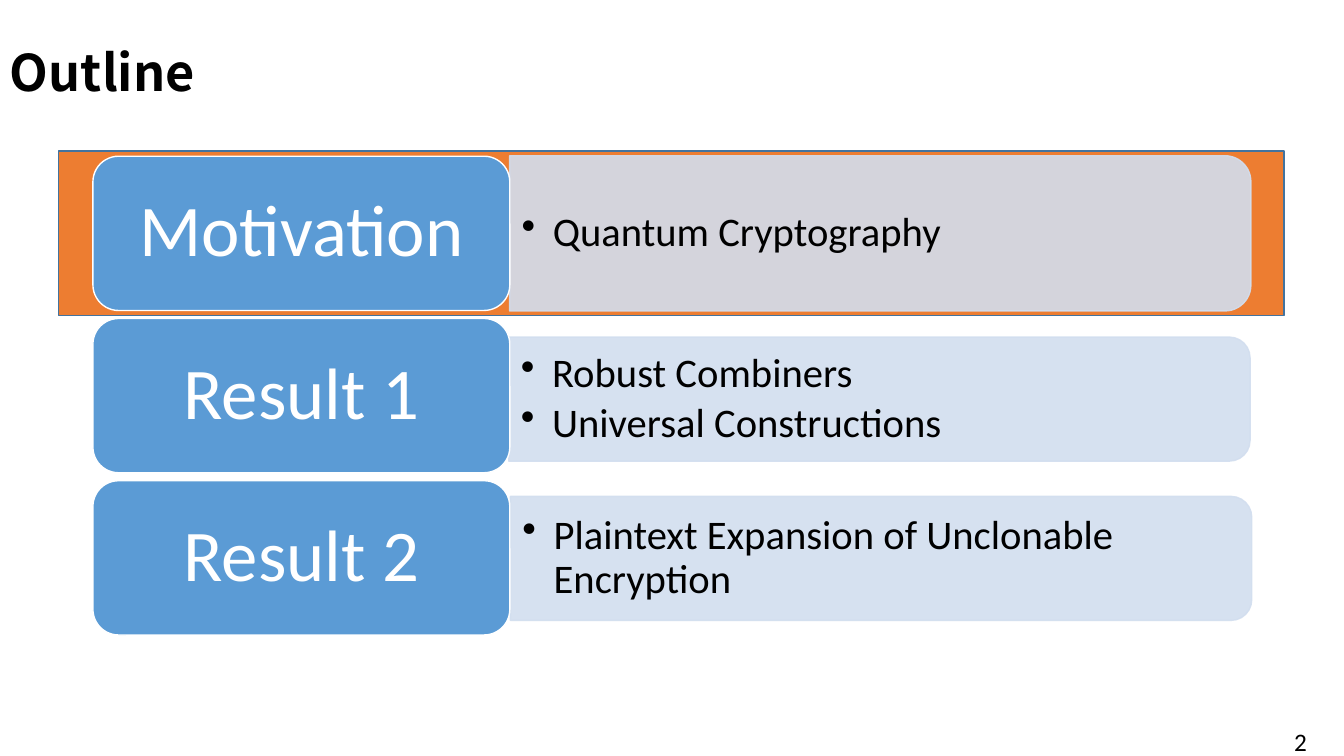
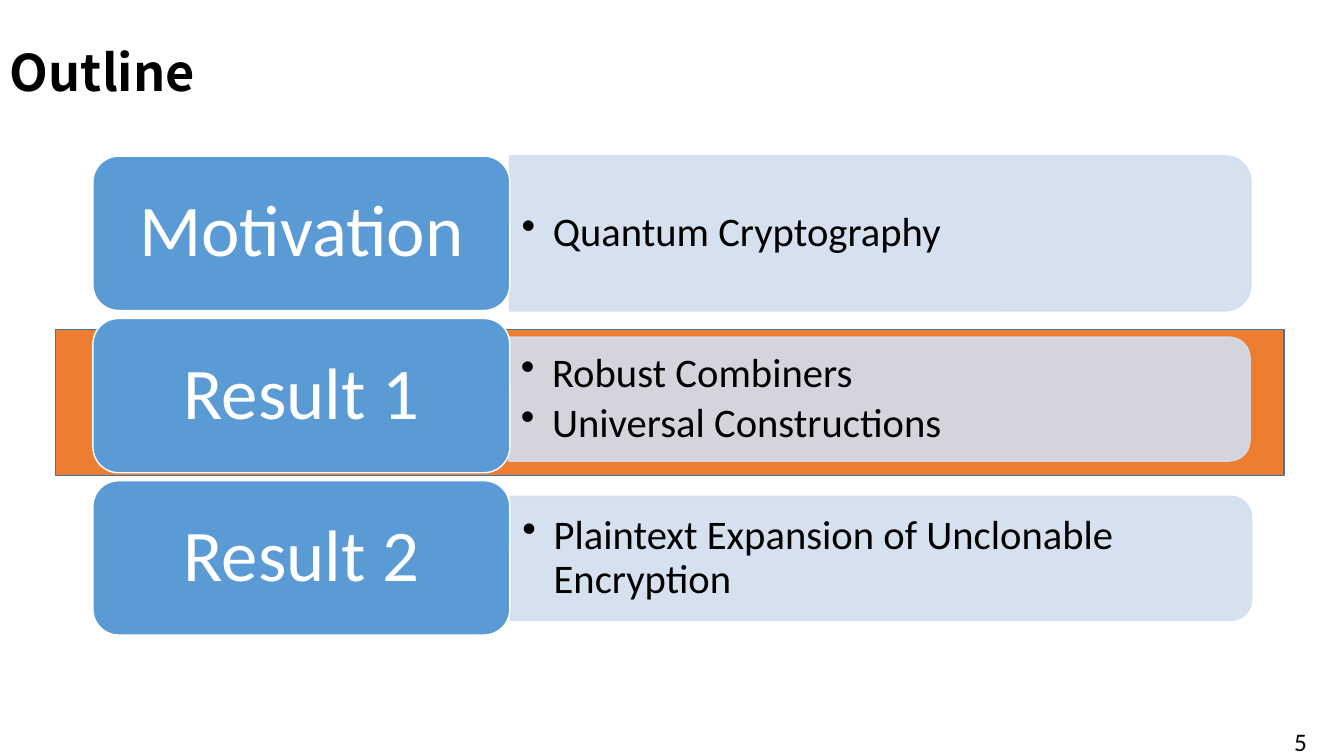
"""Build two outline slides, each with one topic marked by a band."""
from dataclasses import dataclass

from pptx import Presentation as Deck
from pptx.dml.color import RGBColor as Color
from pptx.enum.shapes import MSO_SHAPE as Kind
from pptx.enum.text import MSO_ANCHOR as Anchor, PP_ALIGN as Align
from pptx.oxml.ns import qn
from pptx.oxml.xmlchemy import OxmlElement as Node
from pptx.util import Pt


@dataclass(frozen=True)
class Theme:
    ink: str = "000000"
    white: str = "FFFFFF"
    blue: str = "5B9BD5"
    pale: str = "D2DEEF"
    band: str = "ED7D31"
    edge: str = "43739E"
    head: str = "Noto Sans CJK JP"
    body: str = "Calibri"
    title: float = 36
    label: float = 52
    item: float = 29
    page: float = 18
    lead: float = 0.9


class Pen:
    def __init__(self, deck, theme):
        self.deck, self.theme, self.slide = deck, theme, None

    def start(self, title, page):
        self.slide = self.deck.slides.add_slide(self.deck.slide_layouts[6])
        t = self.theme
        self.text((0, 1.5, 893.5, 104.5), [title], t.title, t.head, bold=True)
        self.text((917.3, 515.5, 27.4, 22.3), [page], t.page,
                  anchor=Anchor.TOP, lead=1)

    def shape(self, kind, box, fill, line):
        part = self.slide.shapes.add_shape(kind, *map(Pt, box))
        part.shadow.inherit = False
        part.fill.solid()
        part.fill.fore_color.rgb = Color.from_string(fill)
        part.line.color.rgb = Color.from_string(line)
        part.line.width = Pt(1)
        return part

    def fill(self, frame, lines, size, face, color, bold=False, lead=None):
        for i, line in enumerate(lines):
            para = frame.paragraphs[0] if i == 0 else frame.add_paragraph()
            para.text = line
            para.line_spacing = lead or self.theme.lead
            font = para.font
            font.size, font.name, font.bold = Pt(size), face, bold
            font.color.rgb = Color.from_string(color)

    def text(self, box, lines, size, face=None, bold=False,
             anchor=Anchor.MIDDLE, lead=None):
        t = self.theme
        frame = self.slide.shapes.add_textbox(*map(Pt, box)).text_frame
        frame.word_wrap = True
        frame.vertical_anchor = anchor
        self.fill(frame, lines, size, face or t.body, t.ink, bold, lead)
        return frame

    def band(self, box):
        self.shape(Kind.RECTANGLE, box, self.theme.band, self.theme.edge)

    def label(self, box, word):
        t = self.theme
        part = self.shape(Kind.ROUNDED_RECTANGLE, box, t.blue, t.white)
        frame = part.text_frame
        frame.word_wrap = True
        frame.vertical_anchor = Anchor.MIDDLE
        self.fill(frame, [word], t.label, t.body, t.white)
        frame.paragraphs[0].alignment = Align.CENTER

    def panel(self, left, mid, width, high):
        t = self.theme
        box = (left + (width - high) / 2, mid - width / 2, high, width)
        part = self.shape(Kind.ROUND_2_SAME_RECTANGLE, box, t.pale, t.pale)
        part.rotation = 90
        for tint in part.element.spPr.iter(qn("a:srgbClr")):
            alpha = Node("a:alpha")
            alpha.set("val", "90000")
            tint.append(alpha)

    def items(self, box, lines):
        frame = self.text(box, lines, self.theme.item)
        frame.margin_left = frame.margin_right = Pt(8.6)
        frame.margin_top = frame.margin_bottom = Pt(4.3)
        for para in frame.paragraphs:
            para.space_after = Pt(4.35)
            props = para._p.get_or_add_pPr()
            props.set("marL", str(Pt(22.3)))
            props.set("indent", str(-Pt(22.3)))
            mark = Node("a:buChar")
            mark.set("char", "•")
            props.insert_element_before(mark, "a:tabLst", "a:defRPr")


ROWS = [
    ("Motivation", ["Quantum Cryptography"], 364, 0, 110.9),
    ("Result 1", ["Robust Combiners", "Universal Constructions"],
     363.4, 2.5, 88.6),
    ("Result 2", ["Plaintext Expansion of Unclonable Encryption"],
     364.6, 0.4, 88.6),
]
PAGES = [("2", (41.8, 108, 875.5, 117.4)),
         ("5", (39.6, 235.4, 877.7, 104.4))]
TOP, HIGH, STEP, WIDE = 111.6, 110.2, 115.9, 529.5


def main():
    deck = Deck()
    deck.slide_width, deck.slide_height = Pt(960), Pt(540)
    pen = Pen(deck, Theme())
    for page, band in PAGES:
        pen.start("Outline", page)
        pen.band(band)
        for i, (word, lines, left, drop, high) in enumerate(ROWS):
            top = TOP + i * STEP
            mid = top + HIGH / 2 + drop
            pen.panel(left, mid, WIDE, high)
            pen.items((left, mid - high / 2, WIDE - 5, high), lines)
            pen.label((66.4, top, 297.8, HIGH), word)
    deck.save("out.pptx")


if __name__ == "__main__":
    main()
